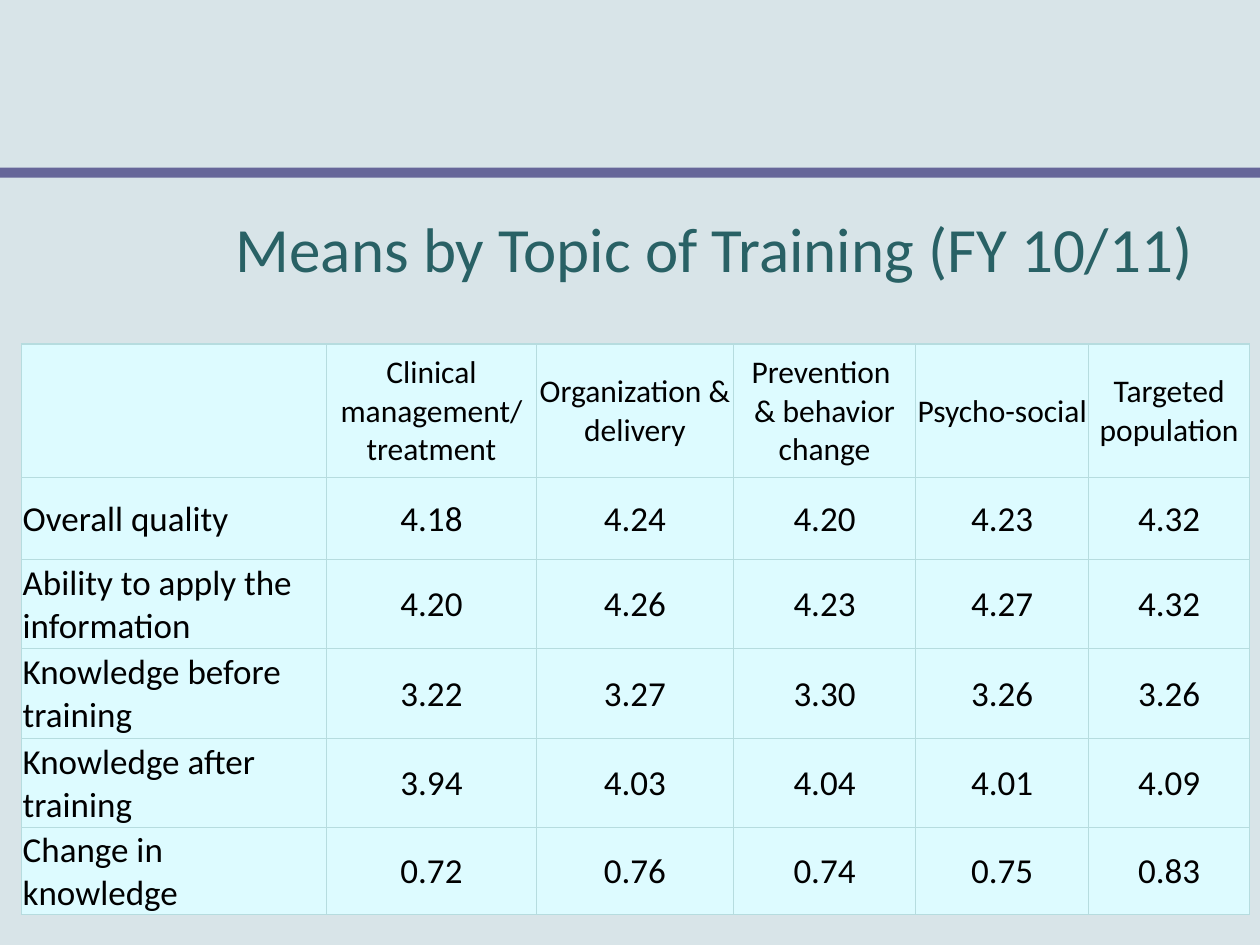
from lxml.etree import SubElement
from pptx import Presentation
from pptx.dml.color import RGBColor
from pptx.enum.shapes import MSO_SHAPE
from pptx.enum.text import MSO_ANCHOR, PP_ALIGN
from pptx.oxml.ns import qn
from pptx.util import Inches, Pt

COLORS = {
    "back": "D8E4E8",
    "bar": "666699",
    "title": "296165",
    "cell": "DDFBFF",
    "grid": "B6DCDF",
    "text": "000000",
}
ROWS = [
    ["", "Clinical management/ treatment", "Organization & delivery",
     "Prevention \n& behavior change", "Psycho-social", "Targeted population"],
    ["Overall quality", "4.18", "4.24", "4.20", "4.23", "4.32"],
    ["Ability to apply the information", "4.20", "4.26", "4.23", "4.27", "4.32"],
    ["Knowledge before training", "3.22", "3.27", "3.30", "3.26", "3.26"],
    ["Knowledge after training", "3.94", "4.03", "4.04", "4.01", "4.09"],
    ["Change in knowledge", "0.72", "0.76", "0.74", "0.75", "0.83"],
]
WIDTHS = [2.42, 1.67, 1.56, 1.45, 1.37, 1.28]
HEIGHTS = [1.06, 0.65, 0.71, 0.71, 0.71, 0.69]


def color(name):
    return RGBColor.from_string(COLORS[name])


def add_grid(cell):
    """Draw a thin line on all four sides of a cell."""
    props = cell._tc.get_or_add_tcPr()
    for place, side in enumerate(("a:lnL", "a:lnR", "a:lnT", "a:lnB")):
        line = SubElement(props, qn(side), w=str(Pt(0.75)))
        fill = SubElement(line, qn("a:solidFill"))
        SubElement(fill, qn("a:srgbClr"), val=COLORS["grid"])
        props.insert(place, line)


deck = Presentation()
deck.slide_width, deck.slide_height = Inches(10), Inches(7.5)
slide = deck.slides.add_slide(deck.slide_layouts[5])
slide.background.fill.solid()
slide.background.fill.fore_color.rgb = color("back")

bar = slide.shapes.add_shape(
    MSO_SHAPE.RECTANGLE, 0, Inches(1.33), Inches(10), Inches(0.08))
bar.shadow.inherit = False
bar.fill.solid()
bar.fill.fore_color.rgb = color("bar")
bar.line.fill.background()

title = slide.shapes.title
title.left, title.top = Inches(1.17), Inches(1.5)
title.width, title.height = Inches(9), Inches(0.92)
title.text_frame.text = "Means by Topic of Training (FY 10/11)"
head = title.text_frame.paragraphs[0]
head.alignment = PP_ALIGN.CENTER
head.font.name, head.font.size = "Calibri", Pt(36)
head.font.color.rgb = color("title")

table = slide.shapes.add_table(
    len(ROWS), len(WIDTHS), Inches(0.17), Inches(2.73),
    Inches(sum(WIDTHS)), Inches(sum(HEIGHTS))).table
table.first_row = table.horz_banding = False
for col, width in zip(table.columns, WIDTHS):
    col.width = Inches(width)
for r, (row, height) in enumerate(zip(ROWS, HEIGHTS)):
    table.rows[r].height = Inches(height)
    for c, text in enumerate(row):
        cell = table.cell(r, c)
        cell.fill.solid()
        cell.fill.fore_color.rgb = color("cell")
        add_grid(cell)
        cell.vertical_anchor = MSO_ANCHOR.MIDDLE
        cell.margin_left = cell.margin_right = cell.margin_top = Inches(0.01)
        cell.margin_bottom = 0
        cell.text = text
        for para in cell.text_frame.paragraphs:
            para.alignment = PP_ALIGN.CENTER if c else PP_ALIGN.LEFT
            para.font.name = "Calibri"
            para.font.size = Pt(20 if r else 18)
            para.font.color.rgb = color("text")

deck.save("out.pptx")
